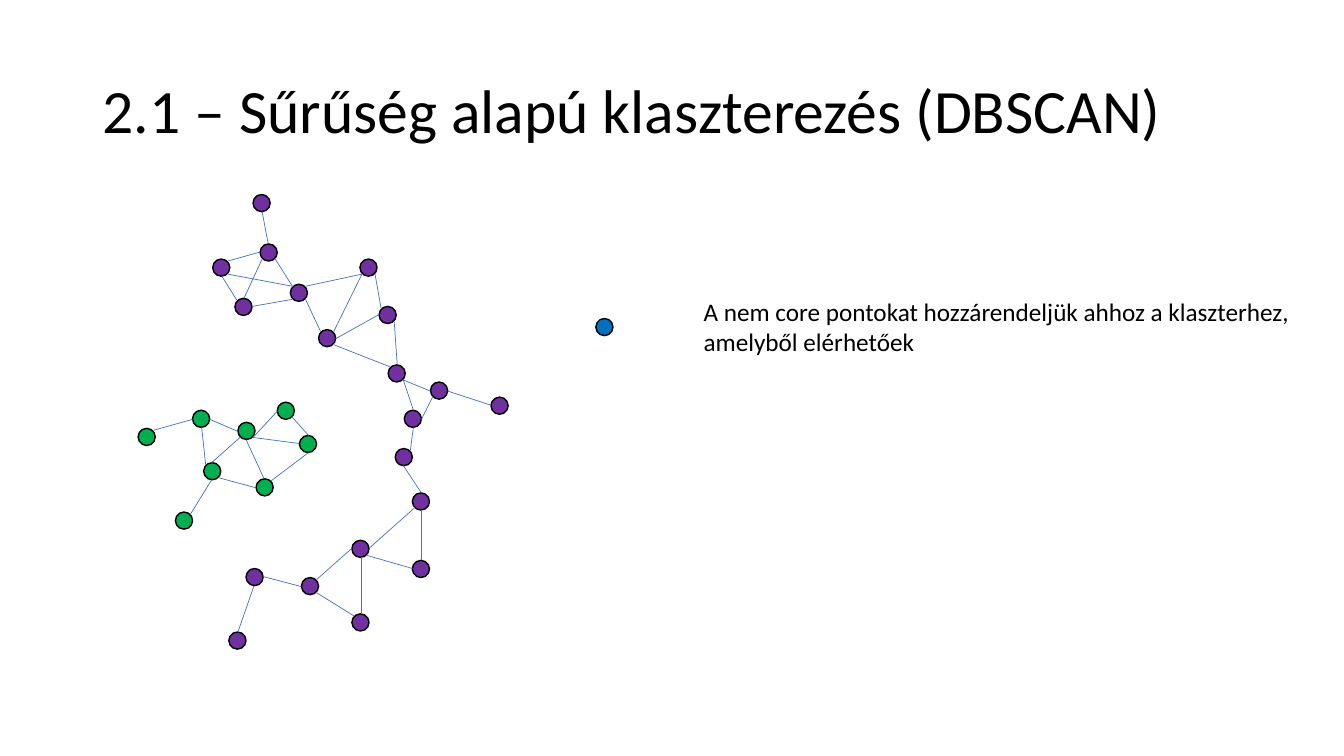
from math import cos, radians, sin

from lxml import etree
from pptx import Presentation
from pptx.dml.color import RGBColor
from pptx.enum.shapes import MSO_CONNECTOR, MSO_SHAPE
from pptx.enum.text import MSO_ANCHOR, MSO_AUTO_SIZE
from pptx.oxml.ns import qn
from pptx.util import Emu, Pt

OVAL = MSO_SHAPE.OVAL
STRAIGHT = MSO_CONNECTOR.STRAIGHT
MIDDLE, TOP = MSO_ANCHOR.MIDDLE, MSO_ANCHOR.TOP
NO_FIT, FIT_SHAPE = MSO_AUTO_SIZE.NONE, MSO_AUTO_SIZE.SHAPE_TO_FIT_TEXT
EMU_PER_PX = 9144
DOT = 17

BLACK, BLUE, EDGE = "000000", "0070C0", "4472C4"
GREEN, PURPLE = "00B050", "7030A0"

SIDE_ANGLES = {side: 45 * i for i, side in enumerate("R BR B BL L TL T TR".split())}

GREEN_POINTS = {
    "g1": (254, 475), "g2": (191, 407), "g3": (297, 432), "g4": (236, 419),
    "g5": (275, 399), "g6": (202, 459), "g7": (137, 425), "g8": (174, 508),
}
PURPLE_POINTS = {
    "p1": (211, 257), "p2": (233, 296), "p3": (258, 242), "p4": (288, 282),
    "p5": (316, 327), "p6": (357, 257), "p7": (376, 304), "p8": (385, 362),
    "p9": (401, 407), "p10": (392, 445), "p11": (227, 627), "p12": (299, 573),
    "p13": (244, 564), "p14": (349, 609), "p15": (349, 536), "p16": (409, 489),
    "p17": (409, 556), "p18": (427, 379), "p19": (487, 394), "p20": (251, 193),
}
EDGES = """
p1 TR p3 L
p1 B p2 TL
p3 BR p4 TL
p2 T p3 BL
p2 R p4 BL
p4 BR p5 TL
p1 BR p4 TL
p4 TR p6 BL
p6 BR p7 TL
p7 L p5 R
p5 TR p6 BL
p7 BR p8 T
p8 BR p18 L
p5 BR p8 TL
p8 BR p9 T
p18 BL p9 R
p9 B p10 TR
p10 B p16 T
p16 B p17 T
p16 BL p15 R
p15 BR p17 L
p15 L p12 TR
p12 BR p14 TL
p15 B p14 T
p12 L p13 R
p13 B p11 T
p20 B p3 T
p19 L p18 R
g4 BL g6 T
g2 R g4 L
g4 BR g5 L
g4 B g1 T
g4 BR g3 L
g5 BR g3 T
g3 B g1 TR
g6 BR g1 L
g2 B g6 TL
g6 B g8 TR
g2 L g7 TR
"""


def px(n):
    return Emu(n * EMU_PER_PX)


def color(value):
    return RGBColor.from_string(value)


def write(tf, text, size=18, fill=BLACK, font="Calibri", spacing=1.0):
    p = tf.paragraphs[0]
    p.line_spacing = spacing
    for i, line in enumerate(text.splitlines()):
        if i:
            p.add_line_break()
        r = p.add_run()
        r.text = line
        r.font.name = font
        r.font.size = Pt(size)
        r.font.color.rgb = color(fill)


def side_point(corner, side):
    angle = radians(SIDE_ANGLES[side])
    x, y = corner
    return round(x + DOT / 2 * (1 + cos(angle))), round(y + DOT / 2 * (1 + sin(angle)))


class Deck:
    def __init__(self, width, height):
        self.prs = Presentation()
        self.prs.slide_width, self.prs.slide_height = px(width), px(height)
        self.s = self.prs.slides.add_slide(self.prs.slide_layouts[6])

    def text(self, x, y, w, h, text, anchor=TOP, wrap=True, fit=NO_FIT, **fmt):
        tf = self.s.shapes.add_textbox(px(x), px(y), px(w), px(h)).text_frame
        tf.word_wrap = wrap
        tf.auto_size = fit
        tf.vertical_anchor = anchor
        write(tf, text, **fmt)

    def dot(self, corner, fill):
        x, y = corner
        sp = self.s.shapes.add_shape(OVAL, px(x), px(y), px(DOT), px(DOT))
        sp.shadow.inherit = False
        sp.fill.solid()
        sp.fill.fore_color.rgb = color(fill)
        sp.line.color.rgb = color(BLACK)
        sp.line.width = Pt(1)

    def edge(self, start, end):
        ends = [px(n) for n in (*start, *end)]
        cxn = self.s.shapes.add_connector(STRAIGHT, *ends)
        cxn.line.color.rgb = color(EDGE)
        cxn.line.width = Pt(0.5)
        etree.SubElement(cxn._element.spPr, qn("a:effectLst"))


def main():
    deck = Deck(1333, 750)
    deck.text(92, 40, 1150, 145, "2.1 – Sűrűség alapú klaszterezés (DBSCAN)",
              anchor=MIDDLE, size=44, spacing=0.9)
    for points, fill in ((GREEN_POINTS, GREEN), (PURPLE_POINTS, PURPLE)):
        for corner in points.values():
            deck.dot(corner, fill)
    points = GREEN_POINTS | PURPLE_POINTS
    for row in EDGES.split("\n"):
        if row:
            a, a_side, b, b_side = row.split()
            deck.edge(side_point(points[a], a_side), side_point(points[b], b_side))
    deck.dot((591, 316), BLUE)
    deck.text(688, 289, 608, 71, """A nem core pontokat hozzárendeljük ahhoz a klaszterhez,
amelyből elérhetőek""", wrap=False, fit=FIT_SHAPE)
    deck.prs.save("out.pptx")


if __name__ == "__main__":
    main()
